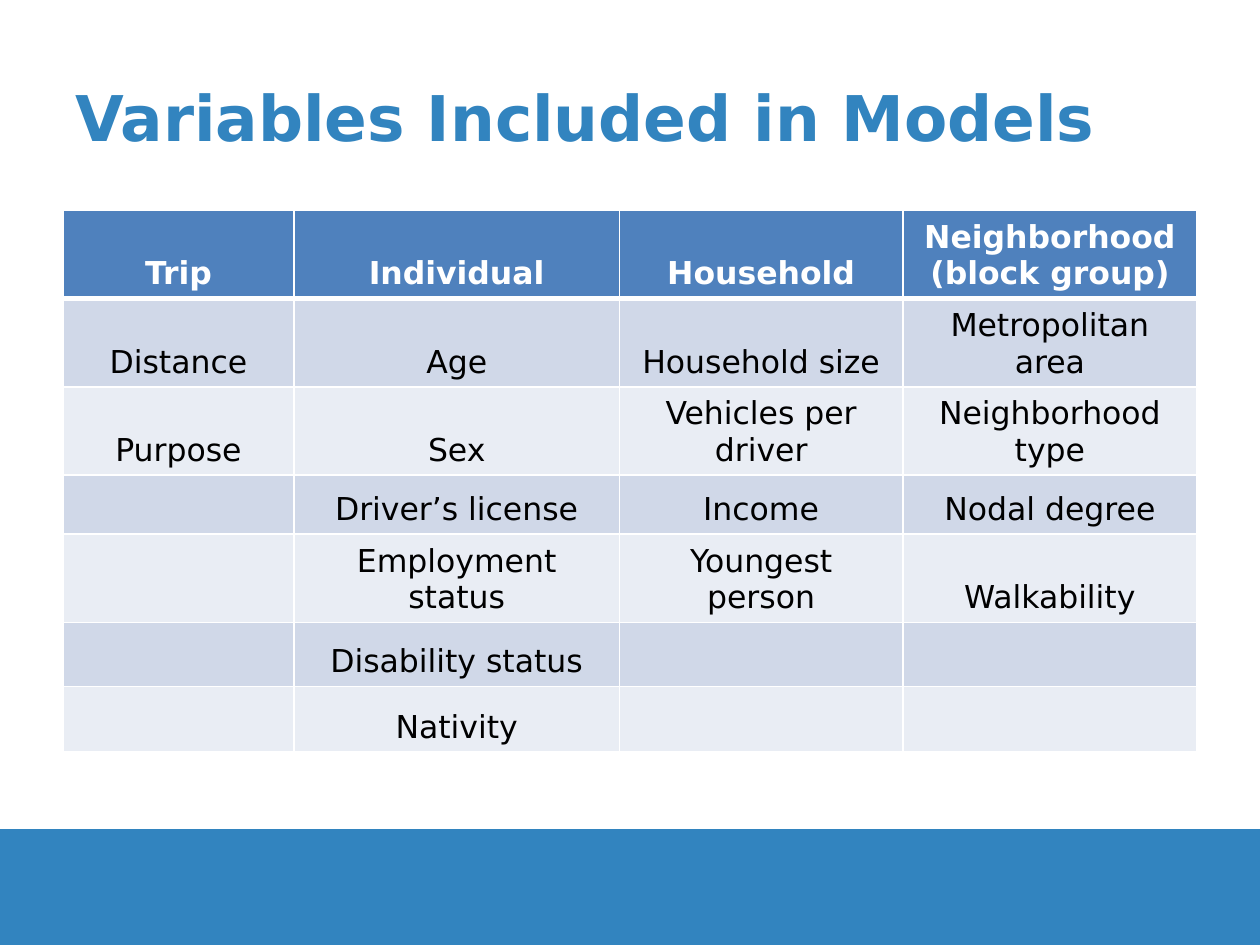
from lxml.etree import SubElement
from pptx import Presentation
from pptx.dml.color import RGBColor
from pptx.enum.shapes import MSO_SHAPE
from pptx.enum.text import MSO_ANCHOR, PP_ALIGN
from pptx.oxml.ns import qn
from pptx.util import Pt

BLUE, HEAD, WHITE, BLACK = "3284BF", "4F81BD", "FFFFFF", "000000"
BANDS = ["D0D8E8", "E9EDF4"]
WIDTHS = [132, 186, 162, 168]
HEIGHTS = [46.8, 38.9, 41.8, 33.8, 33.8, 36.7, 37.4]
ROWS = [
    ["Trip", "Individual", "Household", "Neighborhood (block group)"],
    ["Distance", "Age", "Household size", "Metropolitan area"],
    ["Purpose", "Sex", "Vehicles per driver", "Neighborhood type"],
    ["", "Driver’s license", "Income", "Nodal degree"],
    ["", "Employment status", "Youngest person", "Walkability"],
    ["", "Disability status", "", ""],
    ["", "Nativity", "", ""],
]


def color(code):
    """Turn a hex string into a colour."""
    return RGBColor.from_string(code)


class Deck:
    """Hold the style and the current slide."""

    face = "DejaVu Sans"

    def __init__(self, slide):
        """Keep the slide to draw on."""
        self.slide = slide

    def style(self, para, size, code, bold):
        """Set the font of a paragraph."""
        font = para.font
        font.name, font.size, font.bold = self.face, Pt(size), bold
        font.color.rgb = color(code)

    def bar(self, x, y, w, h, code):
        """Draw a plain filled rectangle."""
        shape = self.slide.shapes.add_shape(MSO_SHAPE.RECTANGLE, Pt(x), Pt(y), Pt(w), Pt(h))
        shape.shadow.inherit = False
        shape.fill.solid()
        shape.fill.fore_color.rgb = color(code)
        shape.line.fill.background()

    def title(self, x, y, w, h, text):
        """Write the slide title."""
        frame = self.slide.shapes.add_textbox(Pt(x), Pt(y), Pt(w), Pt(h)).text_frame
        frame.word_wrap = True
        frame.vertical_anchor = MSO_ANCHOR.MIDDLE
        para = frame.paragraphs[0]
        para.text = text
        self.style(para, 36, BLUE, True)

    def edge(self, cell, side, width):
        """Add one white border to a cell."""
        props = cell._tc.get_or_add_tcPr()
        line = SubElement(props, qn("a:ln" + side), w=str(Pt(width)))
        fill = SubElement(line, qn("a:solidFill"))
        SubElement(fill, qn("a:srgbClr"), val=WHITE)

    def cell(self, cell, text, row):
        """Fill, frame and write one table cell."""
        thick = {"T": 3 if row == 1 else 1, "B": 3 if row == 0 else 1}
        for side in "LRTB":
            self.edge(cell, side, thick.get(side, 1))
        cell.fill.solid()
        cell.fill.fore_color.rgb = color(BANDS[(row - 1) % 2] if row else HEAD)
        cell.vertical_anchor = MSO_ANCHOR.BOTTOM
        para = cell.text_frame.paragraphs[0]
        para.text = text
        para.alignment = PP_ALIGN.CENTER
        self.style(para, 18, BLACK if row else WHITE, row == 0)

    def table(self, x, y, h, widths, heights, rows):
        """Draw a table with a header and banded rows."""
        frame = self.slide.shapes.add_table(
            len(rows), len(widths), Pt(x), Pt(y), Pt(sum(widths)), Pt(h))
        table = frame.table
        for col, width in zip(table.columns, widths):
            col.width = Pt(width)
        for i, (height, texts) in enumerate(zip(heights, rows)):
            table.rows[i].height = Pt(height)
            for j, text in enumerate(texts):
                self.cell(table.cell(i, j), text, i)
        frame.height = Pt(h)


def main():
    """Build and save the slide."""
    show = Presentation()
    show.slide_width, show.slide_height = Pt(720), Pt(540)
    deck = Deck(show.slides.add_slide(show.slide_layouts[6]))
    deck.bar(0, 473.8, 720, 66.2, BLUE)
    deck.title(36, 21.6, 648, 90, "Variables Included in Models")
    deck.table(36, 120.2, 308.9, WIDTHS, HEIGHTS, ROWS)
    show.save("out.pptx")


if __name__ == "__main__":
    main()
